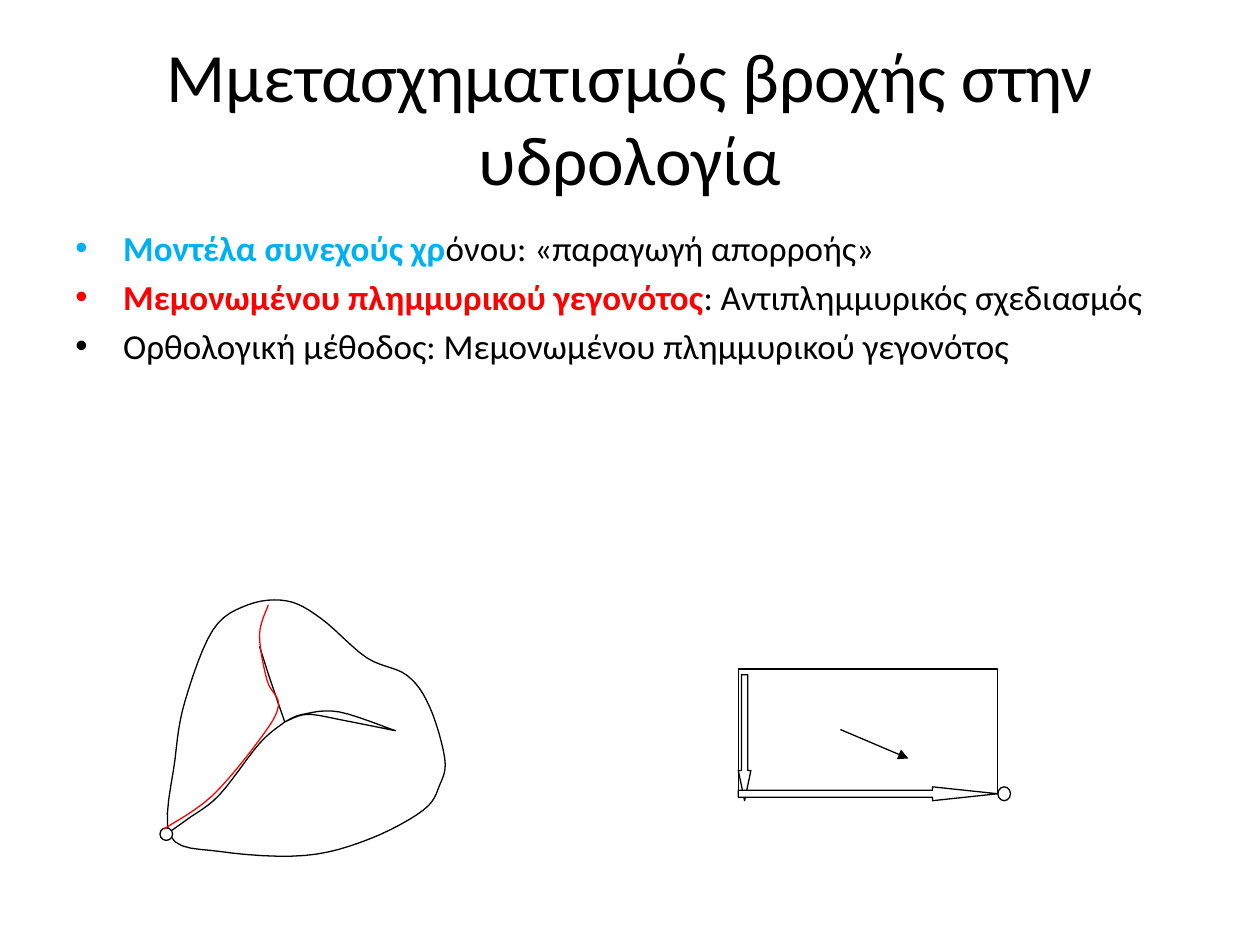
from lxml import etree
from pptx import Presentation
from pptx import util as u
from pptx.dml.color import RGBColor
from pptx.enum import shapes, text
from pptx.oxml.ns import qn

BLACK = RGBColor(0x00, 0x00, 0x00)
WHITE = RGBColor(0xFF, 0xFF, 0xFF)
RED = RGBColor(0xFF, 0x00, 0x00)
BLUE = RGBColor(0x00, 0xB0, 0xF0)
FONT = "Calibri"
LINE_WIDTH = u.Pt(0.75)
KIND = shapes.MSO_SHAPE

TITLE = "Mμετασχηματισμός βροχής στην υδρολογία"
BULLETS = [
    [("Μοντέλα συνεχούς χρ", BLUE, True), ("όνου: «παραγωγή απορροής»", BLACK, False)],
    [("Μεμονωμένου πλημμυρικού γεγονότος", RED, True),
     (": Αντιπλημμυρικός σχεδιασμός", BLACK, False)],
    [("Ορθολογική μέθοδος: Μεμονωμένου πλημμυρικού γεγονότος", BLACK, False)],
]
BULLET_INDENT = 0.38

OUTLET = (1.32, 6.62)
OUTLET_SIZE = 0.1
CONFLUENCE = (2.26, 5.73)
NORTH_SPRING = (2.06, 5.13)
EAST_SPRING = (3.14, 5.8)

DIVIDE = [
    (1.35, 6.63), (1.39, 6.02), (1.47, 5.56), (1.69, 5), (1.97, 4.8), (2.28, 4.77),
    (2.55, 4.91), (2.91, 5.22), (3.23, 5.36), (3.41, 5.61), (3.53, 6.02), (3.49, 6.23),
    (3.36, 6.43), (2.93, 6.66), (2.42, 6.79), (1.76, 6.76),
]
STREAM_LEGS = [
    [NORTH_SPRING, (2.14, 5.38), CONFLUENCE],
    [CONFLUENCE, (2.44, 5.67), (2.74, 5.72), EAST_SPRING],
    [EAST_SPRING, (2.69, 5.65), (2.4, 5.67), CONFLUENCE],
    [CONFLUENCE, (2.06, 5.9), (1.74, 6.31), (1.49, 6.5), OUTLET],
]
LONGEST_FLOW_PATH = [
    (1.3, 6.58), (1.68, 6.32), (2.06, 5.87), (2.21, 5.6), (2.12, 5.4),
    (2.06, 5.04), (2.13, 4.8),
]
STEPS_PER_KNOT = 6

PLANE_LEFT, PLANE_TOP, PLANE_WIDTH, PLANE_HEIGHT = 5.86, 5.31, 2.06, 0.99
PLANE_RIGHT = PLANE_LEFT + PLANE_WIDTH
PLANE_BOTTOM = PLANE_TOP + PLANE_HEIGHT
CHANNEL_WIDTH = 0.11
CHANNEL_TOP = PLANE_BOTTOM - CHANNEL_WIDTH / 2
HILLSLOPE_LENGTH = 1
SLOPE_ARROW = (6.67, 5.79, 7.21, 6.02)


def spline_value(before, start, end, after, t):
    slope = end - before
    bend = 2 * before - 5 * start + 4 * end - after
    twist = 3 * start - before - 3 * end + after
    return start + (slope * t + bend * t ** 2 + twist * t ** 3) / 2


def smooth(knots, closed=False):
    if closed:
        padded = [knots[-1], *knots, *knots[:2]]
    else:
        padded = [knots[0], *knots, knots[-1]]
    points = []
    for quad in zip(padded, padded[1:], padded[2:], padded[3:]):
        for step in range(STEPS_PER_KNOT):
            t = step / STEPS_PER_KNOT
            points.append(tuple(spline_value(*values, t) for values in zip(*quad)))
    return points if closed else points + [knots[-1]]


def style(shape, fill, line):
    shape.shadow.inherit = False
    if fill is None:
        shape.fill.background()
    else:
        shape.fill.solid()
        shape.fill.fore_color.rgb = fill
    shape.line.color.rgb = line
    shape.line.width = LINE_WIDTH


def add_curve(slide, points, line=BLACK, fill=None, closed=False):
    lengths = [(u.Inches(x), u.Inches(y)) for x, y in points]
    builder = slide.shapes.build_freeform(*lengths[0])
    builder.add_line_segments(lengths[1:], close=closed)
    style(builder.convert_to_shape(), fill, line)


def add_preset(slide, kind, left, top, width, height, head_length=None):
    shape = slide.shapes.add_shape(kind, *map(u.Inches, (left, top, width, height)))
    if head_length is not None:
        shape.adjustments[0] = 0.5
        shape.adjustments[1] = head_length
    style(shape, WHITE, BLACK)


def add_slope_arrow(slide):
    arrow = slide.shapes.add_connector(
        shapes.MSO_CONNECTOR.STRAIGHT, *map(u.Inches, SLOPE_ARROW))
    arrow.line.color.rgb = BLACK
    arrow.line.width = LINE_WIDTH
    etree.SubElement(arrow.line._get_or_add_ln(), qn("a:tailEnd"), type="triangle")
    etree.SubElement(arrow._element.spPr, qn("a:effectLst"))


def add_natural_basin(slide):
    add_curve(slide, smooth(DIVIDE, closed=True), fill=WHITE, closed=True)
    add_curve(slide, [point for leg in STREAM_LEGS for point in smooth(leg)])
    left, top = (center - OUTLET_SIZE / 2 for center in OUTLET)
    add_preset(slide, KIND.OVAL, left, top, OUTLET_SIZE, OUTLET_SIZE)
    add_curve(slide, smooth(LONGEST_FLOW_PATH), line=RED)


def add_plane_basin(slide):
    add_preset(slide, KIND.RECTANGLE, PLANE_LEFT, PLANE_TOP, PLANE_WIDTH, PLANE_HEIGHT)
    add_preset(slide, KIND.OVAL, PLANE_RIGHT, CHANNEL_TOP, OUTLET_SIZE, CHANNEL_WIDTH)
    add_slope_arrow(slide)
    hillslope_top = CHANNEL_TOP + CHANNEL_WIDTH - HILLSLOPE_LENGTH
    add_preset(slide, KIND.DOWN_ARROW, PLANE_LEFT, hillslope_top,
               OUTLET_SIZE, HILLSLOPE_LENGTH, head_length=2.4)
    add_preset(slide, KIND.RIGHT_ARROW, PLANE_LEFT, CHANNEL_TOP,
               PLANE_WIDTH, CHANNEL_WIDTH, head_length=4.72)


def add_text_frame(slide, *box):
    frame = slide.shapes.add_textbox(*map(u.Inches, box)).text_frame
    frame.word_wrap = True
    return frame


def format_run(run, size, color, bold=False):
    run.font.name = FONT
    run.font.size = u.Pt(size)
    run.font.color.rgb = color
    run.font.bold = bold


def add_title(slide):
    frame = add_text_frame(slide, 0.5, 0.3, 9, 1.25)
    frame.vertical_anchor = text.MSO_ANCHOR.MIDDLE
    frame.text = TITLE
    paragraph = frame.paragraphs[0]
    paragraph.alignment = text.PP_ALIGN.CENTER
    format_run(paragraph.runs[0], 39.6, BLACK)


def add_bullets(slide):
    frame = add_text_frame(slide, 0.5, 1.75, 9, 1.14)
    for index, parts in enumerate(BULLETS):
        paragraph = frame.add_paragraph() if index else frame.paragraphs[0]
        paragraph.space_before = u.Pt(4)
        properties = paragraph._p.get_or_add_pPr()
        properties.set("marL", str(u.Inches(BULLET_INDENT)))
        properties.set("indent", str(u.Inches(-BULLET_INDENT)))
        etree.SubElement(properties, qn("a:buFont"), typeface="Arial")
        etree.SubElement(properties, qn("a:buChar"), char="•")
        for words, color, bold in parts:
            run = paragraph.add_run()
            run.text = words
            format_run(run, 20, color, bold)


def main():
    presentation = Presentation()
    presentation.slide_width = u.Inches(10)
    presentation.slide_height = u.Inches(7.5)
    slide = presentation.slides.add_slide(presentation.slide_layouts[6])
    for add_part in (add_title, add_natural_basin, add_plane_basin, add_bullets):
        add_part(slide)
    presentation.save("out.pptx")


if __name__ == "__main__":
    main()
